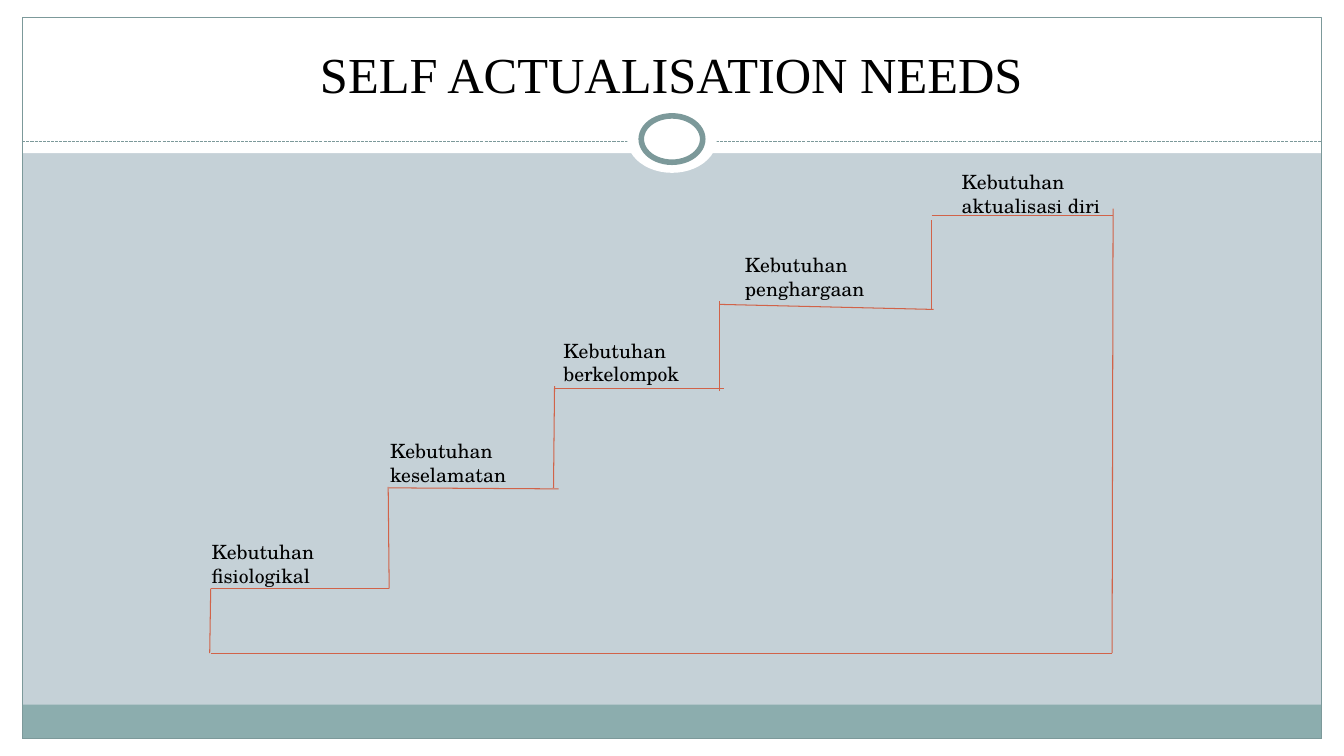
from pptx import Presentation
from pptx.dml.color import RGBColor
from pptx.enum.dml import MSO_LINE
from pptx.enum.shapes import MSO_CONNECTOR, MSO_SHAPE
from pptx.enum.text import MSO_ANCHOR, PP_ALIGN
from pptx.oxml.ns import qn
from pptx.util import Inches, Pt

RECT, OVAL = MSO_SHAPE.RECTANGLE, MSO_SHAPE.OVAL
STRAIGHT, DASH = MSO_CONNECTOR.STRAIGHT, MSO_LINE.SQUARE_DOT
LEFT, CENTER = PP_ALIGN.LEFT, PP_ALIGN.CENTER
TOP, BOTTOM = MSO_ANCHOR.TOP, MSO_ANCHOR.BOTTOM

WHITE = RGBColor(0xFF, 0xFF, 0xFF)
BLACK = RGBColor(0x00, 0x00, 0x00)
MIST = RGBColor(0xC5, 0xD1, 0xD7)
TEAL = RGBColor(0x8C, 0xAD, 0xAE)
SLATE = RGBColor(0x7C, 0x99, 0x9A)
RUST = RGBColor(0xD1, 0x63, 0x49)

# Content
TITLE = "SELF ACTUALISATION NEEDS"
# label, (left, top, width) of the label, tread from, tread to
STEPS = [
    ("Kebutuhan fisiologikal", (2.0, 5.31, 1.51), (2.09, 5.84), (3.86, 5.84)),
    ("Kebutuhan keselamatan", (3.77, 4.31, 1.51), (3.86, 4.84), (5.54, 4.85)),
    ("Kebutuhan berkelompok", (5.49, 3.31, 1.68), (5.49, 3.85), (7.18, 3.85)),
    ("Kebutuhan penghargaan", (7.29, 2.46, 1.51), (7.14, 3.02), (9.26, 3.07)),
    ("Kebutuhan aktualisasi diri", (9.44, 1.64, 1.86), (9.24, 2.14), (11.04, 2.14)),
]
RISERS = [
    ((3.86, 5.84), (3.85, 4.83)),
    ((5.49, 4.84), (5.5, 3.83)),
    ((7.14, 3.88), (7.14, 2.99)),
    ((9.24, 3.07), (9.24, 2.18)),
]
BASE = [
    ((2.09, 5.84), (2.08, 6.48)),
    ((2.09, 6.48), (11.03, 6.48)),
    ((11.04, 2.07), (11.03, 6.48)),
]

# Frame measures
W, H = 13.33, 7.5
SIDE, EDGE = 0.22, 0.17
HEAD, FOOT = 1.52, 0.34
RULE_Y = 1.4
INNER = W - 2 * SIDE
LABEL_H = 0.57

prs = Presentation()
prs.slide_width, prs.slide_height = Inches(W), Inches(H)
s = prs.slides.add_slide(prs.slide_layouts[6])
s.background.fill.solid()
s.background.fill.fore_color.rgb = MIST


def add_shape(kind, box, fill=None, line=None, width=0.75):
    sp = s.shapes.add_shape(kind, *map(Inches, box))
    sp.shadow.inherit = False
    for part, color in ((sp.fill, fill), (sp.line.fill, line)):
        if color is None:
            part.background()
        else:
            part.solid()
            part.fore_color.rgb = color
    if line is not None:
        sp.line.width = Pt(width)


def add_line(start, end, color=RUST, dash=None):
    c = s.shapes.add_connector(STRAIGHT, *map(Inches, start + end))
    c.line.color.rgb = color
    c.line.width = Pt(0.75)
    if dash:
        c.line.dash_style = dash
    props = c._element.spPr
    props.append(props.makeelement(qn("a:effectLst"), {}))


def add_text(text, box, font, align=LEFT, anchor=TOP):
    tf = s.shapes.add_textbox(*map(Inches, box)).text_frame
    tf.word_wrap = True
    tf.vertical_anchor = anchor
    p = tf.paragraphs[0]
    p.alignment = align
    r = p.add_run()
    r.text = text
    r.font.color.rgb = BLACK
    for name, value in font.items():
        setattr(r.font, name, value)


# White margins and footer band
for margin in [(0, H - EDGE, W, EDGE), (0, 0, W, HEAD),
               (0, 0, SIDE, H), (W - SIDE, 0, SIDE, H)]:
    add_shape(RECT, margin, WHITE)
add_shape(RECT, (SIDE, H - EDGE - FOOT, INNER, FOOT), TEAL)
add_shape(RECT, (SIDE, EDGE, INNER, H - 2 * EDGE), line=SLATE)

# Dashed rule with the ring at its centre
add_line((SIDE, RULE_Y), (W - SIDE, RULE_Y), SLATE, DASH)
for w, h, ring in [(0.89, 0.67, None), (0.61, 0.46, SLATE)]:
    add_shape(OVAL, ((W - w) / 2, 1.38 - h / 2, w, h), WHITE, ring, 4)

# Title
add_text(TITLE, (0.44, 0.25, 12.44, 0.83),
         {"name": "Times New Roman", "size": Pt(36)}, CENTER, BOTTOM)

# Staircase
for label, place, start, end in STEPS:
    add_line(start, end)
    add_text(label, place + (LABEL_H,),
             {"name": "TeX Gyre Schola", "size": Pt(14)})
for start, end in RISERS + BASE:
    add_line(start, end)

prs.save("out.pptx")
